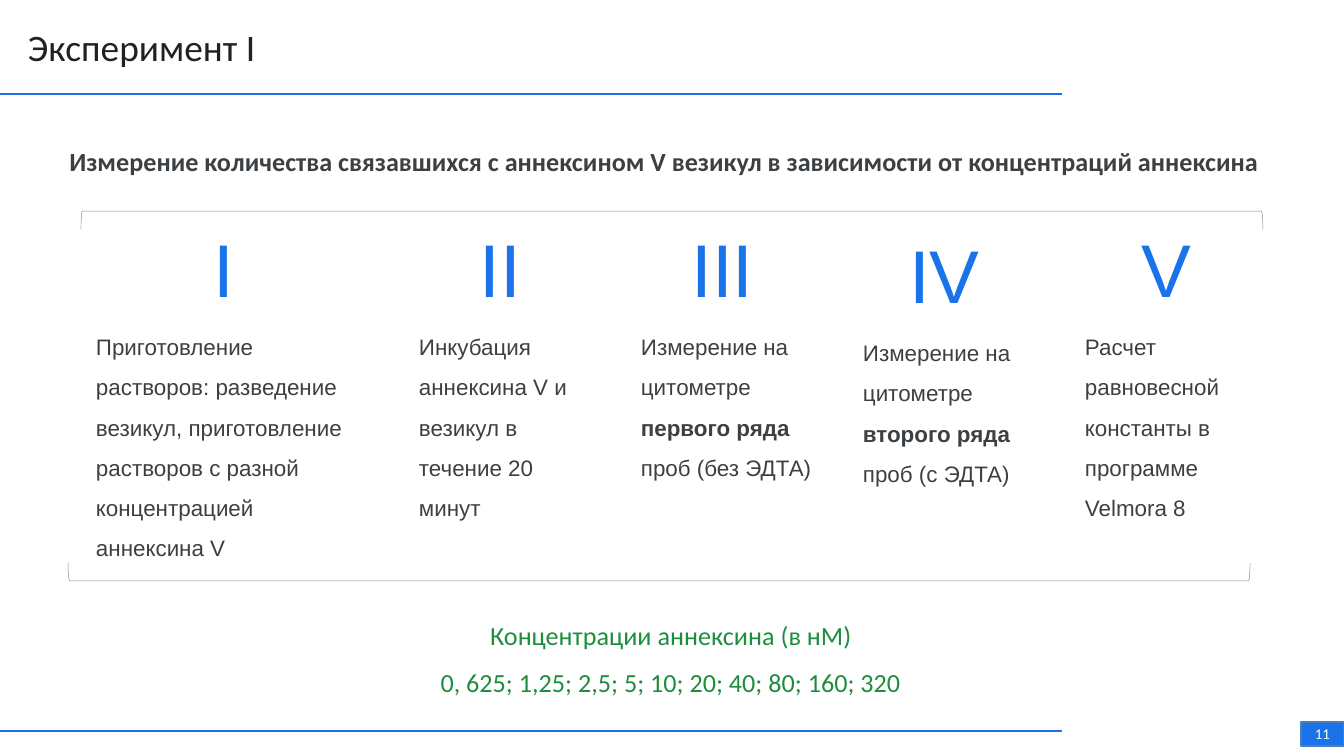
from dataclasses import dataclass

from lxml.etree import SubElement
from pptx import Presentation
from pptx.dml.color import RGBColor
from pptx.enum.shapes import MSO_CONNECTOR, MSO_SHAPE
from pptx.enum.text import MSO_ANCHOR, MSO_AUTO_SIZE, PP_ALIGN
from pptx.oxml.ns import qn
from pptx.slide import Slide
from pptx.text.text import TextFrame
from pptx.util import Emu, Pt


@dataclass(frozen=True)
class Style:
    size: int
    font: str
    color: str
    align: PP_ALIGN = PP_ALIGN.CENTER
    bold: bool = False
    spacing: float = 1.0


@dataclass(frozen=True)
class Theme:
    blue: str = "1A73E8"
    badge_edge: str = "4B7EBC"
    bracket: str = "80868B"
    title: Style = Style(20, "Calibri", "202124", PP_ALIGN.LEFT)
    heading: Style = Style(14, "Calibri", "3C4043", bold=True)
    numeral: Style = Style(40, "Arial", "1A73E8")
    step: Style = Style(12, "Arial", "3C4043", PP_ALIGN.LEFT, spacing=1.5)
    concentrations: Style = Style(14, "Calibri", "1E8E3E", spacing=1.5)
    page: Style = Style(8, "Calibri", "FFFFFF")


@dataclass(frozen=True)
class Box:
    left: int
    top: int
    width: int
    height: int


@dataclass(frozen=True)
class Step:
    numeral: str
    text: str
    lines: int
    column: Box
    numeral_width: int
    strong: str = ""
    ending: str = ""


THEME = Theme()
EMU_PER_PX = 914400 / 134.4
COLUMN_LEFT, COLUMN_WIDTH = 390, 222
NUMERAL_TOP, STEP_TOP, LOWERED = 216, 313, 6
LINE_HEIGHT, STEP_PADDING = 40, 13


def px(length: int) -> Emu:
    return Emu(round(length * EMU_PER_PX))


def bounds(box: Box) -> tuple[Emu, Emu, Emu, Emu]:
    return px(box.left), px(box.top), px(box.width), px(box.height)


def rgb(color: str) -> RGBColor:
    return RGBColor.from_string(color)


def format_text(frame: TextFrame, style: Style) -> None:
    frame.word_wrap = True
    for paragraph in frame.paragraphs:
        paragraph.alignment = style.align
        paragraph.line_spacing = style.spacing
        paragraph.font.size = Pt(style.size)
        paragraph.font.name = style.font
        paragraph.font.bold = style.bold
        paragraph.font.color.rgb = rgb(style.color)


def add_text(slide: Slide, box: Box, text: str, style: Style) -> TextFrame:
    frame = slide.shapes.add_textbox(*bounds(box)).text_frame
    frame.text = text
    format_text(frame, style)
    return frame


def add_label(slide: Slide, preset: MSO_SHAPE, box: Box, text: str,
              style: Style, fill: str = "", edge: str = "") -> None:
    label = slide.shapes.add_shape(preset, *bounds(box))
    label.shadow.inherit = False
    if fill:
        label.fill.solid()
        label.fill.fore_color.rgb = rgb(fill)
    else:
        label.fill.background()
    if edge:
        label.line.color.rgb = rgb(edge)
        label.line.width = Pt(0.75)
    else:
        label.line.fill.background()
    label.text_frame.text = text
    label.text_frame.vertical_anchor = MSO_ANCHOR.MIDDLE
    format_text(label.text_frame, style)


def add_step(slide: Slide, step: Step) -> None:
    column = step.column
    frame = add_text(slide, column, step.text, THEME.step)
    frame.margin_left = px(29)
    if step.strong:
        strong = frame.paragraphs[0].add_run()
        strong.text = step.strong
        strong.font.bold = True
        frame.paragraphs[0].add_run().text = step.ending
    numeral_left = column.left + (column.width - step.numeral_width) // 2
    numeral_top = column.top - STEP_TOP + NUMERAL_TOP
    add_text(slide, Box(numeral_left, numeral_top, step.numeral_width, 103),
             step.numeral, THEME.numeral)


def add_bracket(slide: Slide, box: Box, rotation: int) -> None:
    bracket = slide.shapes.add_shape(MSO_SHAPE.RIGHT_BRACKET, *bounds(box))
    bracket.rotation = rotation
    bracket.shadow.inherit = False
    bracket.fill.background()
    bracket.line.color.rgb = rgb(THEME.bracket)
    bracket.line.width = Pt(0.25)


def add_rule(slide: Slide, top: int) -> None:
    rule = slide.shapes.add_connector(
        MSO_CONNECTOR.STRAIGHT, px(0), px(top), px(1062), px(top))
    rule.line.color.rgb = rgb(THEME.blue)
    rule.line.width = Pt(1)
    SubElement(rule._element.spPr, qn("a:effectLst"))


def column_box(index: int, lines: int, drop: int = 0) -> Box:
    height = lines * LINE_HEIGHT + STEP_PADDING
    if index == 0:
        return Box(67, STEP_TOP, 313, height)
    left = COLUMN_LEFT + (index - 1) * COLUMN_WIDTH
    return Box(left, STEP_TOP + drop, COLUMN_WIDTH, height)


STEPS = [
    Step("I", "Приготовление растворов: разведение везикул, приготовление "
         "растворов с разной концентрацией аннексина V",
         6, column_box(0, 6), 75),
    Step("II", "Инкубация аннексина V и везикул в течение 20 минут",
         5, column_box(1, 5), 75),
    Step("III", "Измерение на цитометре ", 4, column_box(2, 4), 99,
         "первого ряда ", "проб (без ЭДТА)"),
    Step("IV", "Измерение на цитометре ", 4, column_box(3, 4, LOWERED), 99,
         "второго ряда ", "проб (с ЭДТА)"),
    Step("V", "Расчет равновесной константы в программе Velmora 8",
         5, column_box(4, 5), 99),
]


def add_title(slide: Slide, text: str) -> None:
    title = slide.shapes.title
    title.left, title.top, title.width, title.height = bounds(
        Box(15, 11, 890, 83))
    frame = title.text_frame
    frame.text = text
    frame.auto_size = MSO_AUTO_SIZE.NONE
    frame.vertical_anchor = MSO_ANCHOR.TOP
    frame.margin_left = frame.margin_right = px(13)
    frame.margin_top = frame.margin_bottom = px(13)
    format_text(frame, THEME.title)


def main() -> None:
    presentation = Presentation()
    presentation.slide_width, presentation.slide_height = px(1344), px(756)
    slide = presentation.slides.add_slide(presentation.slide_layouts[5])
    add_title(slide, "Эксперимент I")
    add_label(slide, MSO_SHAPE.ROUNDED_RECTANGLE, Box(15, 117, 1305, 89),
              "Измерение количества связавшихся с аннексином V везикул "
              "в зависимости от концентраций аннексина ", THEME.heading)
    for step in STEPS:
        add_step(slide, step)
    add_text(slide, Box(67, 597, 1208, 103),
             "Концентрации аннексина (в нМ)\n"
             "0, 625; 1,25; 2,5; 5; 10; 20; 40; 80; 160; 320",
             THEME.concentrations)
    add_bracket(slide, Box(650, -19, 18, 1182), 90)
    add_bracket(slide, Box(663, -371, 18, 1182), 270)
    for top in (94, 731):
        add_rule(slide, top)
    add_label(slide, MSO_SHAPE.RECTANGLE, Box(1301, 722, 43, 24), "11",
              THEME.page, THEME.blue, THEME.badge_edge)
    presentation.save("out.pptx")


if __name__ == "__main__":
    main()
